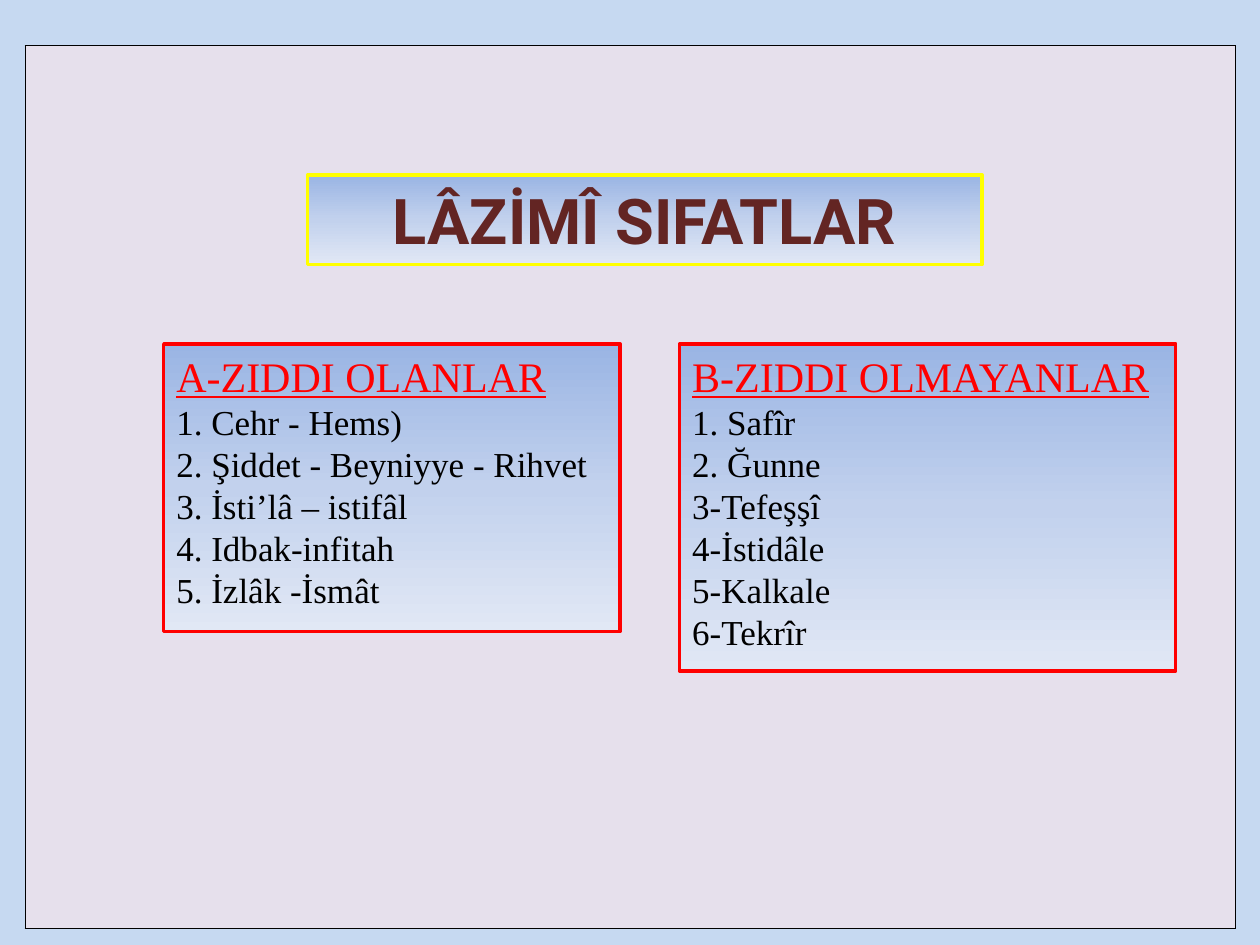
from copy import deepcopy
from dataclasses import dataclass

from lxml.etree import SubElement
from pptx import Presentation
from pptx.dml.color import RGBColor
from pptx.enum.text import MSO_ANCHOR as Anchor, MSO_AUTO_SIZE as AutoSize, PP_ALIGN as Align
from pptx.oxml.ns import qn
from pptx.util import Cm, Pt

SKY = RGBColor(0xC6, 0xD9, 0xF1)
LILAC = RGBColor(0xE6, 0xE0, 0xEC)
YELLOW = RGBColor(0xFF, 0xFF, 0x00)
RED = RGBColor(0xFF, 0x00, 0x00)
MAROON = RGBColor(0x63, 0x25, 0x23)
BLACK = RGBColor(0x00, 0x00, 0x00)
GRADIENT = (
    (0, RGBColor(0x9A, 0xB5, 0xE4)),
    (0.5, RGBColor(0xC2, 0xD1, 0xED)),
    (1, RGBColor(0xE1, 0xE8, 0xF5)),
)
SERIF = "Times New Roman"
LIST_TOP = 6.93


@dataclass
class ListBox:
    left: float
    width: float
    height: float
    heading: str
    items: tuple[str, ...]


LISTS = (
    ListBox(3.3, 9.2, 5.8, "A-ZIDDI OLANLAR", (
        "1. Cehr - Hems)", "2. Şiddet - Beyniyye - Rihvet", "3. İsti’lâ – istifâl",
        "4. Idbak-infitah", "5. İzlâk -İsmât")),
    ListBox(13.7, 10, 6.6, "B-ZIDDI OLMAYANLAR", (
        "1. Safîr", "2. Ğunne", "3-Tefeşşî", "4-İstidâle", "5-Kalkale", "6-Tekrîr")),
)


def write(para, text: str, *, size: float, font: str, color: RGBColor,
          bold: bool = False, underline: bool = False, align=Align.LEFT) -> None:
    """Fill one unbulleted paragraph with formatted text."""
    para.alignment = align
    para.space_before = Pt(0)
    properties = para._p.get_or_add_pPr()
    properties.set("marL", "0")
    properties.set("indent", "0")
    SubElement(properties, qn("a:buNone"))
    span = para.add_run()
    span.text = text
    span.font.size, span.font.name = Pt(size), font
    span.font.bold, span.font.underline = bold, underline
    span.font.color.rgb = color


def style_box(box, left: float, top: float, width: float, height: float,
              outline: RGBColor, anchor) -> None:
    """Place a placeholder and give it the shared gradient and a border."""
    box.left, box.top, box.width, box.height = map(Cm, (left, top, width, height))
    box.fill.gradient()
    box.fill.gradient_angle = 270
    stop_list = box._element.spPr.find(qn("a:gradFill")).find(qn("a:gsLst"))
    stop_list.insert(1, deepcopy(stop_list[0]))
    for stop, (position, color) in zip(box.fill.gradient_stops, GRADIENT):
        stop.position = position
        stop.color.rgb = color
    box.line.color.rgb = outline
    box.line.width = Pt(2)
    frame = box.text_frame
    frame.word_wrap = True
    frame.auto_size = AutoSize.NONE
    frame.vertical_anchor = anchor


def add_panel(page) -> None:
    """Add the one-cell table behind everything else."""
    panel = page.shapes.add_table(1, 1, Cm(0.5), Cm(0.92), Cm(24.4), Cm(17.8))
    cell = panel.table.cell(0, 0)
    cell.fill.solid()
    cell.fill.fore_color.rgb = LILAC
    properties = cell._tc.get_or_add_tcPr()
    for index, side in enumerate(("a:lnL", "a:lnR", "a:lnT", "a:lnB")):
        border = SubElement(properties, qn(side), w=str(Pt(0.25)))
        color = SubElement(SubElement(border, qn("a:solidFill")), qn("a:srgbClr"))
        color.set("val", str(BLACK))
        properties.insert(index, border)
    page.shapes._spTree.insert(2, panel._element)


def fill_list(box, content: ListBox) -> None:
    style_box(box, content.left, LIST_TOP, content.width, content.height, RED, Anchor.TOP)
    frame = box.text_frame
    write(frame.paragraphs[0], content.heading, size=24, font=SERIF, color=RED, underline=True)
    for item in content.items:
        write(frame.add_paragraph(), item, size=20, font=SERIF, color=BLACK)


def main() -> None:
    deck = Presentation()
    deck.slide_width, deck.slide_height = Cm(25.4), Cm(19.05)
    page = deck.slides.add_slide(deck.slide_layouts[3])
    page.background.fill.solid()
    page.background.fill.fore_color.rgb = SKY
    add_panel(page)

    # Title
    title = page.shapes.title
    style_box(title, 6.2, 3.53, 13.6, 1.8, YELLOW, Anchor.MIDDLE)
    write(title.text_frame.paragraphs[0], "LÂZİMÎ SIFATLAR", size=36, font="Roboto",
          color=MAROON, bold=True, align=Align.CENTER)

    # Two lists side by side
    for index, content in enumerate(LISTS, start=1):
        fill_list(page.placeholders[index], content)

    deck.save("out.pptx")


if __name__ == "__main__":
    main()
